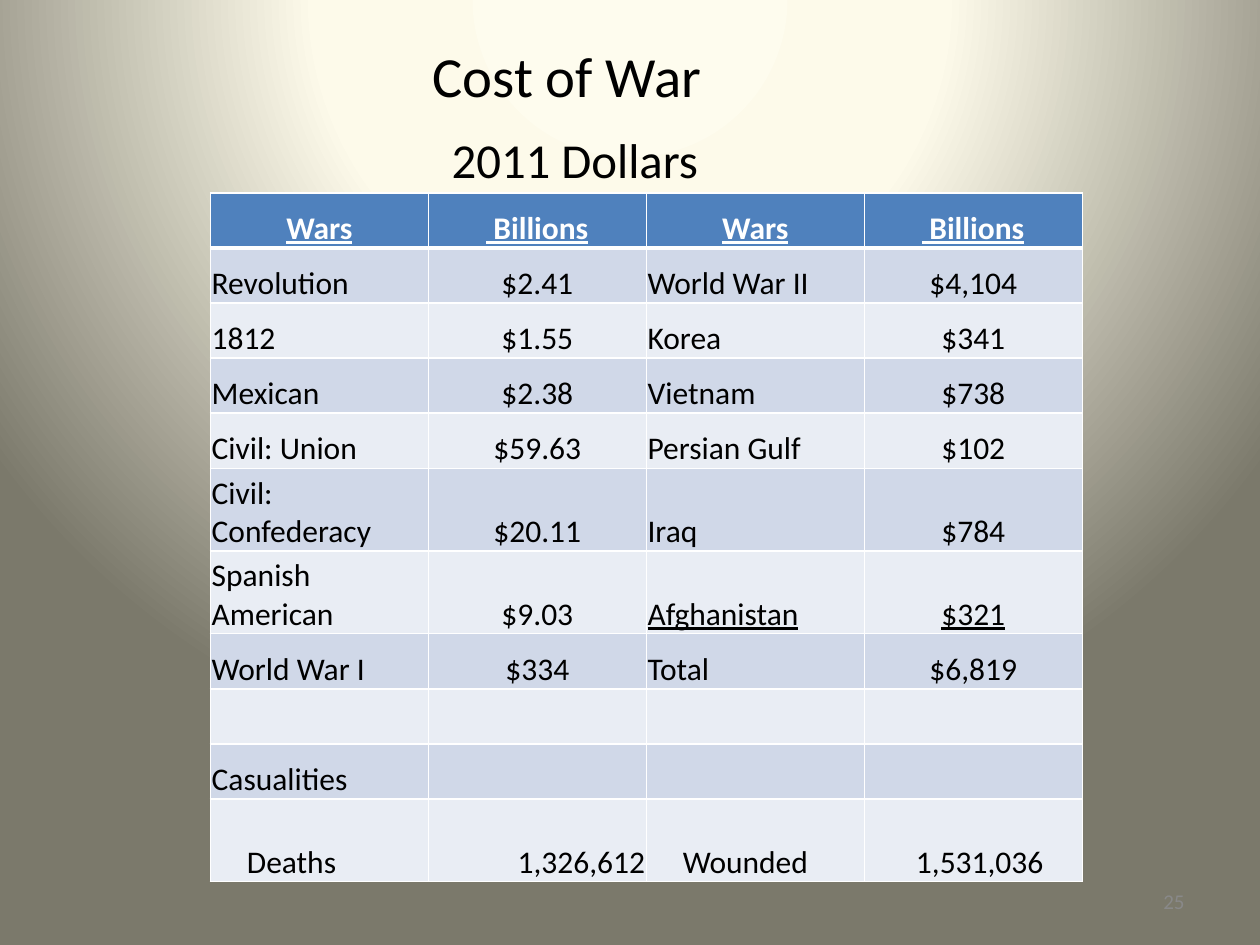
from lxml.etree import SubElement
from pptx import Presentation
from pptx.dml.color import RGBColor
from pptx.enum.text import MSO_ANCHOR as Anchor, MSO_AUTO_SIZE as AutoSize, PP_ALIGN as Align
from pptx.oxml import parse_xml
from pptx.oxml.ns import nsdecls, qn
from pptx.util import Inches, Pt

COLORS = {
    "text": "000000", "white": "FFFFFF", "header": "4F81BD",
    "band_dark": "D0D8E8", "band_light": "E9EDF4", "number": "898989",
    "glow": "FEFCEE", "cream": "FDFAEA", "olive": "7B796B",
}

COSTS = [
    ("Wars", " Billions", "Wars", " Billions"),
    ("Revolution", "$2.41", "World War II", "$4,104"),
    ("1812", "$1.55", "Korea", "$341"),
    ("Mexican", "$2.38", "Vietnam", "$738"),
    ("Civil: Union", "$59.63", "Persian Gulf", "$102"),
    ("Civil: Confederacy", "$20.11", "Iraq", "$784"),
    ("Spanish American", "$9.03", "Afghanistan", "$321"),
    ("World War I", "$334", "Total", "$6,819"),
    ("", "", "", ""),
    ("Casualities", "", "", ""),
    ("Deaths", "1,326,612", "Wounded", "1,531,036"),
]
TALL_ROWS = (5, 6, 10)
UNDERLINED = ("Afghanistan", "$321")
INDENTS = {"Deaths": 0.28, "Wounded": 0.28, "1,531,036": 0.4}


class SlideBuilder:
    font = "Calibri"

    def __init__(self, slide):
        self.slide = slide

    def style(self, run, size, color="text", bold=False, underline=False):
        font = run.font
        font.name, font.size, font.bold, font.underline = self.font, Pt(size), bold, underline
        font.color.rgb = RGBColor.from_string(COLORS[color])

    def background(self, stops):
        self.slide.background.fill.solid()
        bg_pr = self.slide.background._cSld.bg.bgPr
        stop_xml = "".join(
            f'<a:gs pos="{pos * 1000}"><a:srgbClr val="{COLORS[color]}"/></a:gs>'
            for pos, color in stops)
        gradient = parse_xml(
            f'<a:gradFill {nsdecls("a")} rotWithShape="1"><a:gsLst>{stop_xml}</a:gsLst>'
            '<a:path path="circle"><a:fillToRect l="50000" t="-80000" r="50000" b="180000"/>'
            '</a:path></a:gradFill>')
        bg_pr.replace(bg_pr.find(qn("a:solidFill")), gradient)

    def title(self, heading, subheading, left, top, width, height):
        title = self.slide.shapes.title
        title.left, title.top = Inches(left), Inches(top)
        title.width, title.height = Inches(width), Inches(height)
        frame = title.text_frame
        frame.auto_size = AutoSize.NONE
        frame.vertical_anchor = Anchor.MIDDLE
        lines = frame.paragraphs[0]
        lines.alignment = Align.CENTER
        for text, size in ((heading, 32.4), (" ", 39.6), (subheading, 27.9)):
            run = lines.add_run()
            run.text = text
            self.style(run, size)
            if text == heading:
                lines.add_line_break()

    def borders(self, cell, bottom):
        tc_pr = cell._tc.get_or_add_tcPr()
        for side, width in (("L", 1), ("R", 1), ("T", 1), ("B", bottom)):
            line = SubElement(tc_pr, qn(f"a:ln{side}"), w=str(Pt(width)))
            fill = SubElement(line, qn("a:solidFill"))
            SubElement(fill, qn("a:srgbClr"), val=COLORS["white"])

    def cell(self, cell, text, fill, is_header, align):
        self.borders(cell, 3 if is_header else 1)
        cell.fill.solid()
        cell.fill.fore_color.rgb = RGBColor.from_string(COLORS[fill])
        cell.vertical_anchor = Anchor.BOTTOM
        cell.margin_left = cell.margin_right = cell.margin_top = Inches(0.01)
        cell.margin_bottom = 0
        if not text:
            return
        paragraph = cell.text_frame.paragraphs[0]
        paragraph.text = text
        paragraph.alignment = align
        if text in INDENTS:
            paragraph._p.get_or_add_pPr().set("marL", str(Inches(INDENTS[text])))
        self.style(paragraph.runs[0], 18, "white" if is_header else "text",
                   is_header, is_header or text in UNDERLINED)

    def table(self, rows, left, top, width, height):
        table = self.slide.shapes.add_table(
            len(rows), len(rows[0]), Inches(left), Inches(top),
            Inches(width), Inches(height)).table
        # A tall row takes three units of height, any other row two
        unit = height / (2 * len(rows) + len(TALL_ROWS))
        for r, values in enumerate(rows):
            table.rows[r].height = Inches(unit * (3 if r in TALL_ROWS else 2))
            fill = "header" if r == 0 else "band_dark" if r % 2 else "band_light"
            for c, text in enumerate(values):
                align = Align.CENTER if r == 0 or c % 2 else Align.LEFT
                if r == len(rows) - 1:
                    align = Align.RIGHT if c == 1 else Align.LEFT
                self.cell(table.cell(r, c), text, fill, r == 0, align)

    def page_number(self, text, left, top, width, height):
        box = self.slide.shapes.add_textbox(
            Inches(left), Inches(top), Inches(width), Inches(height))
        frame = box.text_frame
        frame.word_wrap = True
        frame.vertical_anchor = Anchor.MIDDLE
        frame.text = text
        frame.paragraphs[0].alignment = Align.RIGHT
        self.style(frame.paragraphs[0].runs[0], 12, "number")


def main():
    deck = Presentation()
    deck.slide_width, deck.slide_height = Inches(10), Inches(7.5)
    builder = SlideBuilder(deck.slides.add_slide(deck.slide_layouts[5]))

    # Background and heading
    builder.background([(0, "glow"), (40, "cream"), (100, "olive")])
    builder.title("Cost of War", "2011 Dollars", 0, 0.3, 9, 1.25)

    # War costs and casualties
    builder.table(COSTS, 1.67, 1.53, 6.92, 5.47)

    # Footer
    builder.page_number("25", 7.17, 6.95, 2.33, 0.4)
    deck.save("out.pptx")


if __name__ == "__main__":
    main()
